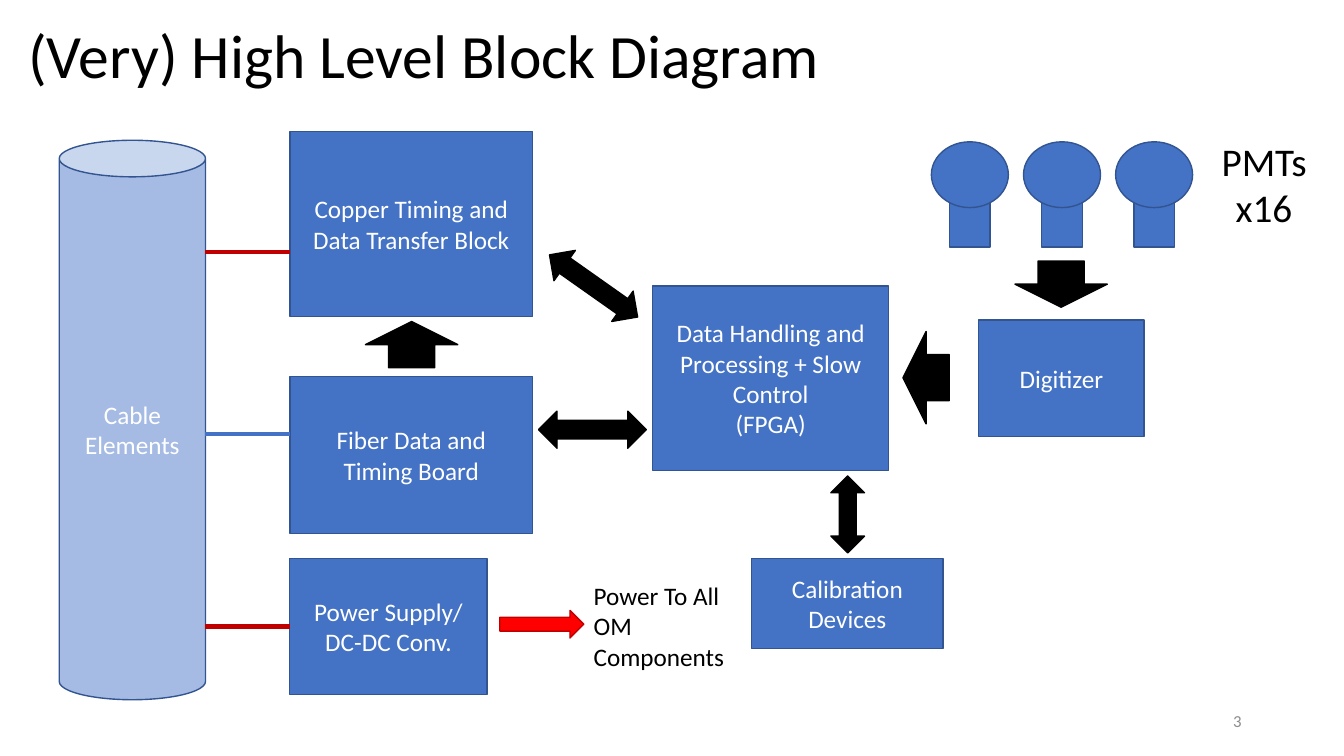
from lxml import etree
from pptx import Presentation
from pptx.dml.color import RGBColor
from pptx.enum.shapes import MSO_CONNECTOR, MSO_SHAPE
from pptx.enum.text import MSO_ANCHOR, MSO_AUTO_SIZE, PP_ALIGN
from pptx.oxml.ns import qn
from pptx.util import Pt

BLUE, EDGE, BLACK, WHITE = "4472C4", "325491", "000000", "FFFFFF"
RED, DARK_RED = "FF0000", "C00000"


def write(sp, text, size, color, align, anchor=MSO_ANCHOR.MIDDLE):
    tf = sp.text_frame
    tf.text = text
    tf.vertical_anchor = anchor
    for p in tf.paragraphs:
        p.alignment = align
        for r in p.runs:
            r.font.name = "Calibri"
            r.font.size = Pt(size)
            r.font.color.rgb = RGBColor.from_string(color)
    return tf


def add_shape(kind, x, y, w, h, fill=BLUE, line=EDGE, text=""):
    sp = s.shapes.add_shape(kind, Pt(x), Pt(y), Pt(w), Pt(h))
    sp.shadow.inherit = False
    sp.fill.solid()
    sp.fill.fore_color.rgb = RGBColor.from_string(fill)
    sp.line.color.rgb = RGBColor.from_string(line)
    sp.line.width = Pt(1)
    if text:
        write(sp, text, 18, WHITE, PP_ALIGN.CENTER)
    return sp


prs = Presentation()
prs.slide_width, prs.slide_height = Pt(960), Pt(540)
s = prs.slides.add_slide(prs.slide_layouts[5])

# Title
title = s.shapes.title
title.left, title.top, title.width, title.height = Pt(13), Pt(4.3), Pt(745), Pt(75)
tf = write(title, "(Very) High Level Block Diagram", 44, BLACK, PP_ALIGN.LEFT)
tf.auto_size = MSO_AUTO_SIZE.NONE
tf.paragraphs[0].line_spacing = 0.9

# Photomultiplier tubes: neck behind bulb
for i in range(3):
    x = 665.3 + i * 65.8
    add_shape(MSO_SHAPE.RECTANGLE, x + 13, 131, 29, 45.4)
    add_shape(MSO_SHAPE.OVAL, x, 101.3, 55, 47)

# Blocks
blocks = {}
for text, x, y, w, h in [
    ("Digitizer", 699, 228.5, 118.3, 83.3),
    ("Data Handling and Processing + Slow Control\n(FPGA)", 466.3, 204.3, 168.5, 131.7),
    ("Fiber Data and Timing Board", 207, 269, 173.5, 112),
    ("Copper Timing and Data Transfer Block", 207, 94, 173.5, 132),
    ("Power Supply/\nDC-DC Conv.", 207, 399, 141, 97),
    ("Calibration Devices", 537, 399, 136.5, 64.2),
]:
    blocks[text] = add_shape(MSO_SHAPE.RECTANGLE, x, y, w, h, text=text)

# Block arrows
for kind, x, y, w, h, rotation, fill, line in [
    (MSO_SHAPE.DOWN_ARROW, 725, 186.5, 66, 33, 0, BLACK, BLACK),
    (MSO_SHAPE.DOWN_ARROW, 628.5, 253.3, 66, 33, 90, BLACK, BLACK),
    (MSO_SHAPE.DOWN_ARROW, 261, 229.7, 66, 33, 180, BLACK, BLACK),
    (MSO_SHAPE.RIGHT_ARROW, 357, 436, 60, 19.7, 0, RED, DARK_RED),
    (MSO_SHAPE.LEFT_RIGHT_ARROW, 385.5, 191, 77, 26.5, 35.2, BLACK, BLACK),
    (MSO_SHAPE.LEFT_RIGHT_ARROW, 384.7, 293.7, 77, 26.5, 0, BLACK, BLACK),
    (MSO_SHAPE.LEFT_RIGHT_ARROW, 578, 355.5, 55, 24, 90, BLACK, BLACK),
]:
    add_shape(kind, x, y, w, h, fill, line).rotation = rotation

# Cable cylinder, 80 % opaque
cable = add_shape(MSO_SHAPE.CAN, 42.3, 100.2, 104.5, 399.6, "8FAADC", text="Cable Elements")
color = cable.fill._xPr.find(qn("a:solidFill"))[0]
etree.SubElement(color, qn("a:alpha")).set("val", "80000")

# Cable lines
for y, line in [(180, DARK_RED), (309.8, BLUE), (447.5, DARK_RED)]:
    cx = s.shapes.add_connector(MSO_CONNECTOR.STRAIGHT, Pt(146.5), Pt(y), Pt(207), Pt(y))
    cx.line.color.rgb = RGBColor.from_string(line)
    cx.line.width = Pt(3)
    etree.SubElement(cx._element.spPr, qn("a:effectLst"))
cx.end_connect(blocks["Power Supply/\nDC-DC Conv."], 1)

# Labels and slide number
for text, x, y, w, h, size, color, align, anchor, wrap in [
    ("PMTs", 865.5, 94.3, 76.3, 41, 28, BLACK, PP_ALIGN.LEFT, MSO_ANCHOR.TOP, False),
    ("x16", 875.5, 127.5, 55.4, 41, 28, BLACK, PP_ALIGN.LEFT, MSO_ANCHOR.TOP, False),
    ("Power To All OM Components", 417, 411, 108, 72.7, 18, BLACK,
     PP_ALIGN.LEFT, MSO_ANCHOR.TOP, True),
    ("3", 678, 500.5, 216, 28.8, 12, "8C8C8C", PP_ALIGN.RIGHT, MSO_ANCHOR.MIDDLE, True),
]:
    sp = s.shapes.add_textbox(Pt(x), Pt(y), Pt(w), Pt(h))
    write(sp, text, size, color, align, anchor).word_wrap = wrap

prs.save("out.pptx")
